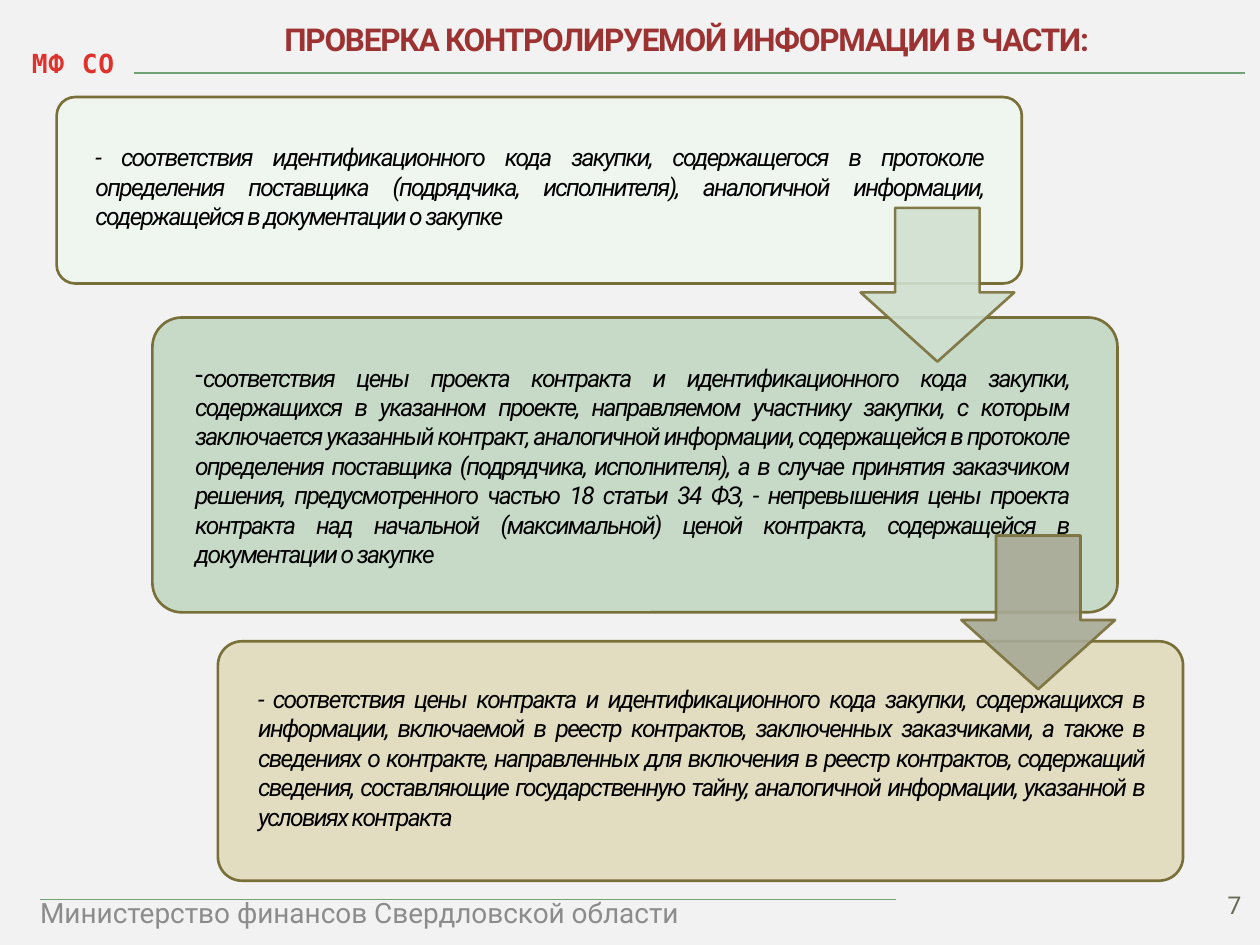
from lxml import etree
from pptx import Presentation
from pptx.dml.color import RGBColor
from pptx.enum.shapes import MSO_CONNECTOR, MSO_SHAPE
from pptx.enum.text import MSO_ANCHOR, MSO_AUTO_SIZE, PP_ALIGN
from pptx.oxml.ns import qn
from pptx.util import Inches, Pt

ROUNDED, DOWN = MSO_SHAPE.ROUNDED_RECTANGLE, MSO_SHAPE.DOWN_ARROW
STRAIGHT = MSO_CONNECTOR.STRAIGHT
LEFT, CENTER, RIGHT, JUSTIFY = PP_ALIGN.LEFT, PP_ALIGN.CENTER, PP_ALIGN.RIGHT, PP_ALIGN.JUSTIFY
TOP, MIDDLE, BOTTOM = MSO_ANCHOR.TOP, MSO_ANCHOR.MIDDLE, MSO_ANCHOR.BOTTOM
GROW = MSO_AUTO_SIZE.SHAPE_TO_FIT_TEXT

COLORS = {
    "back": "F2F2F2", "rule": "72A376", "edge": "796F39",
    "mark": "E0322D", "title": "9D3232", "body": "000000",
    "footer": "8C8C8C", "number": "676A55",
    "mint": "EFF5EF", "green": "C7DAC8", "sand": "E2DCC1",
    "pale_arrow": "D0E0D0", "dark_arrow": "A7AA95",
}
COLS, ROWS = 100, 75
PANEL_W, ARROW = 76.6, 12.2


class Deck:
    """Style and current slide; positions are columns and rows of the grid."""

    font = "Roboto"

    def __init__(self):
        self.prs = Presentation()
        self.prs.slide_width, self.prs.slide_height = Inches(10), Inches(7.5)
        self.s = self.prs.slides.add_slide(self.prs.slide_layouts[6])
        self.paint(self.s.background.fill, "back")

    def grid(self, x, y):
        return (round(self.prs.slide_width * x / COLS),
                round(self.prs.slide_height * y / ROWS))

    def paint(self, fill, color, alpha=None):
        fill.solid()
        fill.fore_color.rgb = RGBColor.from_string(COLORS[color])
        if alpha:
            rgb = fill._xPr.find(".//" + qn("a:srgbClr"))
            etree.SubElement(rgb, qn("a:alpha")).set("val", str(alpha * 1000))

    def shape(self, kind, at, size, fill, adjust, alpha=None):
        sp = self.s.shapes.add_shape(kind, *self.grid(*at), *self.grid(*size))
        sp.shadow.inherit = False
        for i, value in enumerate(adjust):
            sp.adjustments[i] = value
        self.paint(sp.fill, fill, alpha)
        sp.line.width = Pt(1.5)
        self.paint(sp.line.fill, "edge", alpha)

    def rule(self, start, end):
        line = self.s.shapes.add_connector(STRAIGHT, *self.grid(*start), *self.grid(*end))
        line.line.width = Pt(0.94)
        self.paint(line.line.fill, "rule")
        etree.SubElement(line._element.spPr, qn("a:effectLst"))

    def text(self, text, at, size, color, pt, align=LEFT, anchor=TOP, bold=False,
             italic=False, spacing=0, font=None, bullet=None, grow=True):
        tf = self.s.shapes.add_textbox(*self.grid(*at), *self.grid(*size)).text_frame
        tf.word_wrap = True
        tf.vertical_anchor = anchor
        if grow:
            tf.auto_size = GROW
        p = tf.paragraphs[0]
        p.alignment = align
        if bullet:
            pPr = p._p.get_or_add_pPr()
            pPr.set("marL", "0")
            pPr.set("indent", str(-Inches(0.31)))
            etree.SubElement(pPr, qn("a:buChar")).set("char", bullet)
        r = p.add_run()
        r.text = text
        r.font.name, r.font.size = font or self.font, Pt(pt)
        r.font.bold, r.font.italic = bold, italic
        self.paint(r.font.fill, color)
        if spacing:
            r._r.get_or_add_rPr().set("spc", str(round(spacing * 100)))
        return p


# Panels: position, height, fill, text position, text size, anchor, bullet, text
PANELS = [
    ((4.5, 7.7), 14.8, "mint", (6.6, 10.8), (72.4, 8.1), TOP, None,
     "- соответствия идентификационного кода закупки, содержащегося в протоколе "
     "определения поставщика (подрядчика, исполнителя), аналогичной информации, "
     "содержащейся в документации о закупке"),
    ((12.1, 25.2), 23.4, "green", (14.5, 28.2), (71.3, 17.5), MIDDLE, "-",
     "соответствия цены проекта контракта и идентификационного кода закупки, "
     "содержащихся в указанном проекте, направляемом участнику закупки, с которым "
     "заключается указанный контракт, аналогичной информации, содержащейся в протоколе "
     "определения поставщика (подрядчика, исполнителя), а в случае принятия заказчиком "
     "решения, предусмотренного частью 18 статьи 34 ФЗ, - непревышения цены проекта "
     "контракта над начальной (максимальной) ценой контракта, содержащейся в "
     "документации о закупке"),
    ((17.3, 50.9), 19, "sand", (19.5, 53.8), (72.3, 12.8), TOP, None,
     "- соответствия цены контракта и идентификационного кода закупки, содержащихся в "
     "информации, включаемой в реестр контрактов, заключенных заказчиками, а также в "
     "сведениях о контракте, направленных для включения в реестр контрактов, содержащий "
     "сведения, составляющие государственную тайну, аналогичной информации, указанной в "
     "условиях контракта"),
]
ARROWS = [((68.3, 16.5), "pale_arrow"), ((76.3, 42.5), "dark_arrow")]


def main():
    deck = Deck()

    # Header
    p = deck.text("МФ СО", (-0.6, 2.9), (12.8, 3.9), "mark", 15, CENTER, bold=True,
                  spacing=0.5, font="DejaVu Sans Mono")
    p.line_spacing, p.space_after = 1.15, Pt(10.4)
    deck.rule((10.6, 5.8), (98.8, 5.8))
    deck.text("ПРОВЕРКА КОНТРОЛИРУЕМОЙ ИНФОРМАЦИИ В ЧАСТИ:", (19.3, 1.1), (70.4, 4),
              "title", 18, CENTER, bold=True, spacing=-0.7)

    # Footer
    deck.text("Министерство финансов Свердловской области", (2.2, 70.6), (71.8, 3.7),
              "footer", 16)
    deck.rule((3.2, 71.4), (71.1, 71.4))
    deck.text("7", (93.4, 69.5), (6.1, 4), "number", 14, RIGHT, BOTTOM, grow=False)

    # Stepped panels
    for at, height, fill, text_at, text_size, anchor, bullet, text in PANELS:
        deck.shape(ROUNDED, at, (PANEL_W, height), fill, [0.1])
        deck.text(text, text_at, text_size, "body", 14, JUSTIFY, anchor,
                  italic=True, spacing=-1, bullet=bullet)

    # Arrows between the panels
    for at, fill in ARROWS:
        deck.shape(DOWN, at, (ARROW, ARROW), fill, [0.55, 0.45], alpha=90)

    deck.prs.save("out.pptx")


if __name__ == "__main__":
    main()
